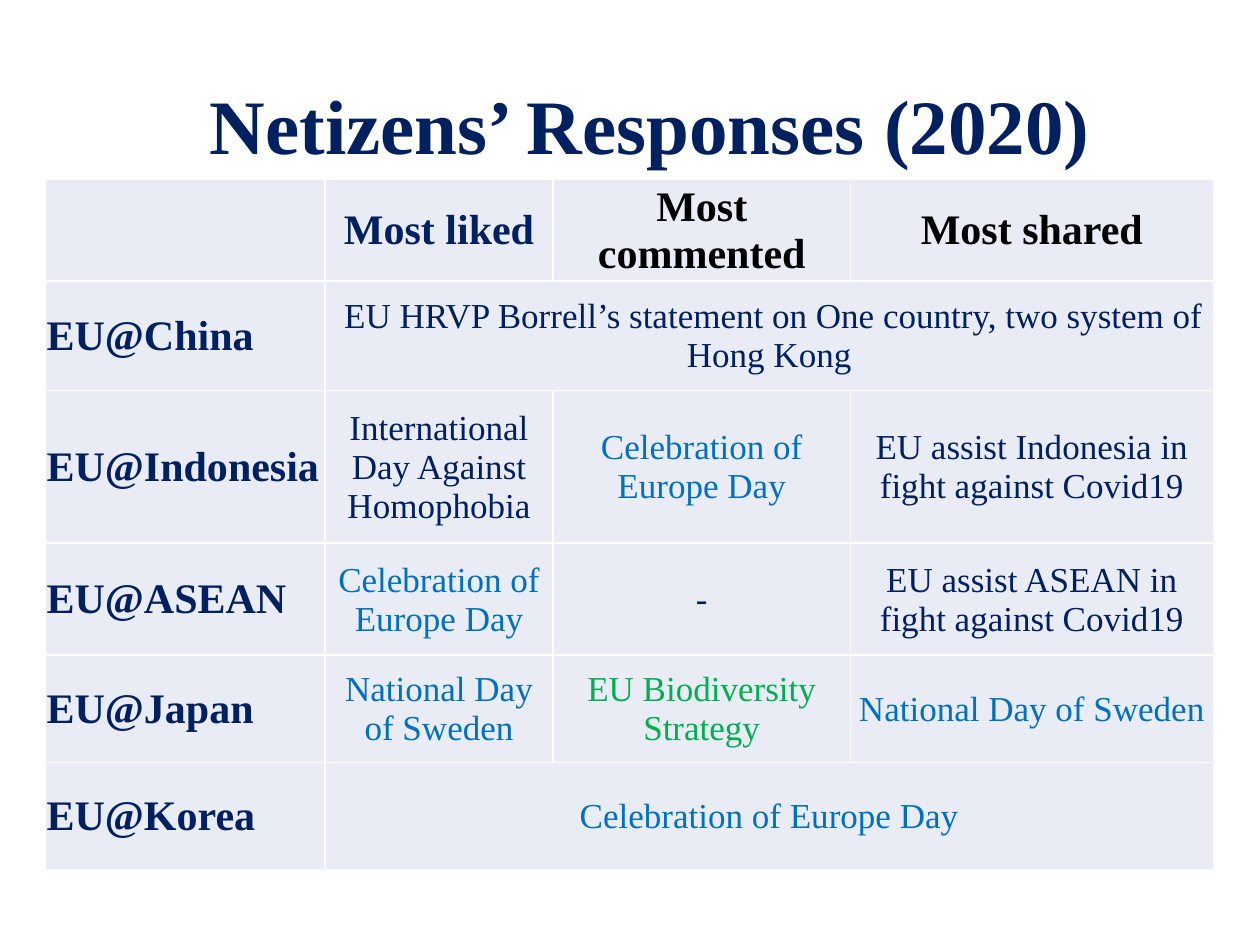
from lxml import etree
from pptx import Presentation
from pptx.dml.color import RGBColor
from pptx.enum.text import MSO_ANCHOR, PP_ALIGN
from pptx.oxml.ns import qn
from pptx.util import Inches, Pt

MIDDLE = MSO_ANCHOR.MIDDLE
LEFT, CENTER = PP_ALIGN.LEFT, PP_ALIGN.CENTER
BLANK_LAYOUT = 6

FONT = "Times New Roman"
NAVY, BLUE, GREEN, BLACK = "002060", "0070C0", "00B050", "000000"
CELL_FILL, BORDER = "E9EBF5", "FFFFFF"

COLUMN_WIDTHS = [2.22, 1.81, 2.36, 2.88]
ROW_HEIGHTS = [0.55, 0.87, 1.21, 0.89, 0.85, 0.85]
HEADERS = [("Most liked", NAVY), ("Most commented", BLACK), ("Most shared", BLACK)]
EUROPE_DAY = ("Celebration of Europe Day", BLUE)
SWEDEN_DAY = ("National Day of Sweden", BLUE)
RESPONSES = {
    "EU@China": [(" EU HRVP Borrell’s statement on One country, two system of Hong Kong", NAVY)],
    "EU@Indonesia": [
        ("International Day Against Homophobia", NAVY),
        EUROPE_DAY,
        ("EU assist Indonesia in fight against Covid19", NAVY),
    ],
    "EU@ASEAN": [
        EUROPE_DAY,
        ("-", NAVY),
        ("EU assist ASEAN in fight against Covid19", NAVY),
    ],
    "EU@Japan": [SWEDEN_DAY, ("EU Biodiversity Strategy", GREEN), SWEDEN_DAY],
    "EU@Korea": [EUROPE_DAY],
}
CELL_FORMAT = {
    "vertical_anchor": MIDDLE,
    "margin_left": Inches(0.01),
    "margin_right": Inches(0.01),
    "margin_top": Inches(0.01),
    "margin_bottom": Inches(0),
}


def rgb(color):
    """Turn a hex string into a colour."""
    return RGBColor.from_string(color)


def set_attributes(target, values):
    """Set every named value on the target."""
    for name, value in values.items():
        setattr(target, name, value)


def write_text(tf, text, size, color, bold=False, align=CENTER):
    """Write one formatted run and return its paragraph."""
    p = tf.paragraphs[0]
    p.alignment = align
    r = p.add_run()
    r.text = text
    set_attributes(r.font, {"name": FONT, "size": Pt(size), "bold": bold})
    r.font.color.rgb = rgb(color)
    return p


def add_title(s, text):
    """Add the slide title."""
    tf = s.shapes.add_textbox(Inches(0.85), Inches(0.64), Inches(8.62), Inches(0.77)).text_frame
    set_attributes(tf, {"word_wrap": True, "vertical_anchor": MIDDLE})
    write_text(tf, text, 44, NAVY, bold=True).line_spacing = 0.9


def style_cell(cell):
    """Give a cell its margins, borders and fill."""
    set_attributes(cell, CELL_FORMAT)
    props = cell._tc.get_or_add_tcPr()
    for side in ("a:lnL", "a:lnR", "a:lnT", "a:lnB"):
        line = etree.SubElement(props, qn(side), w=str(Pt(1)))
        fill = etree.SubElement(line, qn("a:solidFill"))
        etree.SubElement(fill, qn("a:srgbClr"), val=BORDER)
    cell.fill.solid()
    cell.fill.fore_color.rgb = rgb(CELL_FILL)


def add_grid(s):
    """Add the empty styled table."""
    table = s.shapes.add_table(
        len(ROW_HEIGHTS), len(COLUMN_WIDTHS), Inches(0.36), Inches(1.42),
        Inches(sum(COLUMN_WIDTHS)), Inches(sum(ROW_HEIGHTS)),
    ).table
    set_attributes(table, {"first_row": False, "horz_banding": False})
    for column, width in zip(table.columns, COLUMN_WIDTHS):
        column.width = Inches(width)
    for row, height in zip(table.rows, ROW_HEIGHTS):
        row.height = Inches(height)
    for cell in table.iter_cells():
        style_cell(cell)
    return table


def fill_table(table):
    """Write the headers and each account's responses."""
    for col, (text, color) in enumerate(HEADERS, 1):
        write_text(table.cell(0, col).text_frame, text, 24, color, bold=True)
    for row, (account, responses) in enumerate(RESPONSES.items(), 1):
        write_text(table.cell(row, 0).text_frame, account, 24, NAVY, bold=True, align=LEFT)
        if len(responses) == 1:
            table.cell(row, 1).merge(table.cell(row, len(HEADERS)))
        for col, (text, color) in enumerate(responses, 1):
            write_text(table.cell(row, col).text_frame, text, 20, color)


def main():
    """Build and save the slide."""
    prs = Presentation()
    set_attributes(prs, {"slide_width": Inches(10), "slide_height": Inches(7.5)})
    s = prs.slides.add_slide(prs.slide_layouts[BLANK_LAYOUT])
    add_title(s, "Netizens’ Responses (2020)")
    fill_table(add_grid(s))
    prs.save("out.pptx")


if __name__ == "__main__":
    main()
